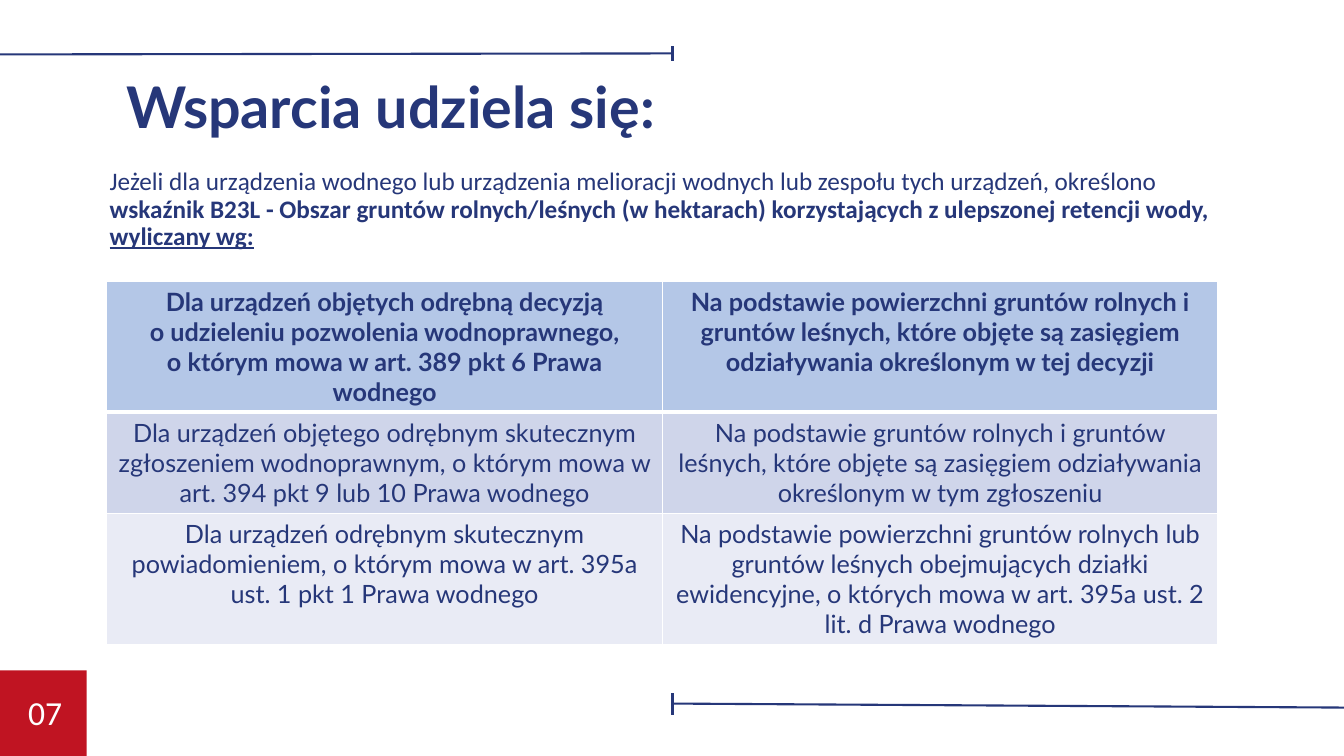
import pptx
import pptx.util
import pptx.dml.color
import pptx.enum.shapes
import pptx.enum.text
import pptx.oxml
import pptx.oxml.ns
from lxml import etree

Inches = pptx.util.Inches
Pt = pptx.util.Pt
Align = pptx.enum.text.PP_ALIGN

COLORS = {
    "navy": "263779",
    "red": "C01422",
    "white": "FFFFFF",
    "header": "B4C7E7",
    "band": "CFD5EA",
    "light": "E9EBF5",
}

RULES = [
    ((0, 0.54), (6.67, 0.53)),
    ((6.67, 0.46), (6.67, 0.61)),
    ((13.33, 7.02), (6.67, 6.98)),
    ((6.67, 7.09), (6.67, 6.88)),
]

INTRO = [
    ("Jeżeli dla urządzenia wodnego lub urządzenia melioracji wodnych "
     "lub zespołu tych urządzeń, określono", False, False),
    ("wskaźnik B23L - Obszar gruntów rolnych/leśnych (w hektarach) "
     "korzystających z ulepszonej retencji wody,", True, False),
    ("wyliczany wg:", True, True),
]

ROWS = [
    ("header", 1.3, [
        [["Dla urządzeń objętych odrębną decyzją",
          "o udzieleniu pozwolenia wodnoprawnego,",
          "o którym mowa w art. 389 pkt 6 Prawa wodnego"]],
        [["Na podstawie powierzchni gruntów rolnych i gruntów leśnych, "
          "które objęte są zasięgiem odziaływania określonym w tej decyzji"]],
    ]),
    ("band", 1.0, [
        [["Dla urządzeń objętego odrębnym skutecznym zgłoszeniem "
          "wodnoprawnym, o którym mowa w art. 394 pkt 9 lub 10 Prawa wodnego"]],
        [["Na podstawie gruntów rolnych i gruntów leśnych, które objęte są "
          "zasięgiem odziaływania określonym w tym zgłoszeniu"]],
    ]),
    ("light", 1.3, [
        [["Dla urządzeń odrębnym skutecznym"],
         ["powiadomieniem, o którym mowa w art. 395a ust. 1 pkt 1 Prawa wodnego"]],
        [["Na podstawie powierzchni gruntów rolnych lub gruntów leśnych "
          "obejmujących działki ewidencyjne, o których mowa w art. 395a ust. 2 "
          "lit. d Prawa wodnego"]],
    ]),
]


def rgb(name):
    return pptx.dml.color.RGBColor.from_string(COLORS[name])


class PageBuilder:
    heading_font = "Lato"
    body_font = "Calibri"

    def __init__(self, page):
        self.page = page

    def span(self, para, text, size, font, color="navy", bold=False, underline=False):
        span = para.add_run()
        span.text = text
        span.font.size = Pt(size)
        span.font.name = font
        span.font.bold = bold
        span.font.underline = underline
        span.font.color.rgb = rgb(color)

    def rule(self, start, end):
        points = [Inches(value) for value in start + end]
        rule = self.page.shapes.add_connector(
            pptx.enum.shapes.MSO_CONNECTOR.STRAIGHT, *points)
        rule.line.color.rgb = rgb("navy")
        rule.line.width = Pt(1.5)
        etree.SubElement(rule._element.spPr, pptx.oxml.ns.qn("a:effectLst"))

    def title(self, text, left, top, width, height):
        title = self.page.shapes.title
        title.left, title.top = Inches(left), Inches(top)
        title.width, title.height = Inches(width), Inches(height)
        frame = title.text_frame
        frame.auto_size = pptx.enum.text.MSO_AUTO_SIZE.NONE
        frame.vertical_anchor = pptx.enum.text.MSO_ANCHOR.TOP
        frame.paragraphs[0].alignment = Align.LEFT
        self.span(frame.paragraphs[0], text, 41, self.heading_font, bold=True)

    def text_frame(self, left, top, width, height):
        box = self.page.shapes.add_textbox(
            Inches(left), Inches(top), Inches(width), Inches(height))
        box.text_frame.word_wrap = True
        return box.text_frame

    def intro(self, lines, *place):
        frame = self.text_frame(*place)
        for index, (text, bold, underline) in enumerate(lines):
            para = frame.add_paragraph() if index else frame.paragraphs[0]
            para.alignment = Align.JUSTIFY
            para.line_spacing = Pt(19.6)
            self.span(para, text, 18, self.body_font, bold=bold, underline=underline)

    def page_number(self, text):
        square = self.page.shapes.add_shape(
            pptx.enum.shapes.MSO_SHAPE.RECTANGLE,
            Inches(0), Inches(6.65), Inches(0.86), Inches(0.85))
        square.shadow.inherit = False
        square.fill.solid()
        square.fill.fore_color.rgb = rgb("red")
        square.line.fill.background()
        frame = self.text_frame(0.18, 6.82, 0.57, 0.5)
        self.span(frame.paragraphs[0], text, 24, self.body_font, "white")

    def borders(self, cell, widths):
        properties = cell._tc.get_or_add_tcPr()
        for side, width in widths.items():
            properties.append(pptx.oxml.parse_xml(
                f'<a:ln{side} {pptx.oxml.ns.nsdecls("a")} w="{Pt(width)}">'
                f'<a:solidFill><a:srgbClr val="{COLORS["white"]}"/></a:solidFill>'
                f'</a:ln{side}>'))

    def cell(self, cell, paragraphs, color, bold, widths):
        self.borders(cell, widths)
        cell.fill.solid()
        cell.fill.fore_color.rgb = rgb(color)
        frame = cell.text_frame
        for index, lines in enumerate(paragraphs):
            para = frame.add_paragraph() if index else frame.paragraphs[0]
            para.alignment = Align.CENTER
            for number, line in enumerate(lines):
                if number:
                    para.add_line_break()
                self.span(para, line, 18, self.heading_font, bold=bold)

    def table(self, rows, left, top, width):
        height = sum(row[1] for row in rows)
        table = self.page.shapes.add_table(
            len(rows), 2, Inches(left), Inches(top),
            Inches(width), Inches(height)).table
        for index, (color, row_height, texts) in enumerate(rows):
            table.rows[index].height = Inches(row_height)
            widths = {"L": 1, "R": 1, "T": 3 if index == 1 else 1,
                      "B": 3 if index == 0 else 1}
            for column, paragraphs in enumerate(texts):
                self.cell(table.cell(index, column), paragraphs, color,
                          index == 0, widths)


def main():
    deck = pptx.Presentation()
    deck.slide_width, deck.slide_height = Inches(13.33), Inches(7.5)
    builder = PageBuilder(deck.slides.add_slide(deck.slide_layouts[5]))
    for start, end in RULES:
        builder.rule(start, end)
    builder.page_number("07")
    builder.title("Wsparcia udziela się:", 1.15, 0.66, 11.15, 0.79)
    builder.intro(INTRO, 0.99, 1.62, 11.84, 0.94)
    builder.table(ROWS, 1.06, 2.79, 11.02)
    deck.save("out.pptx")


if __name__ == "__main__":
    main()
